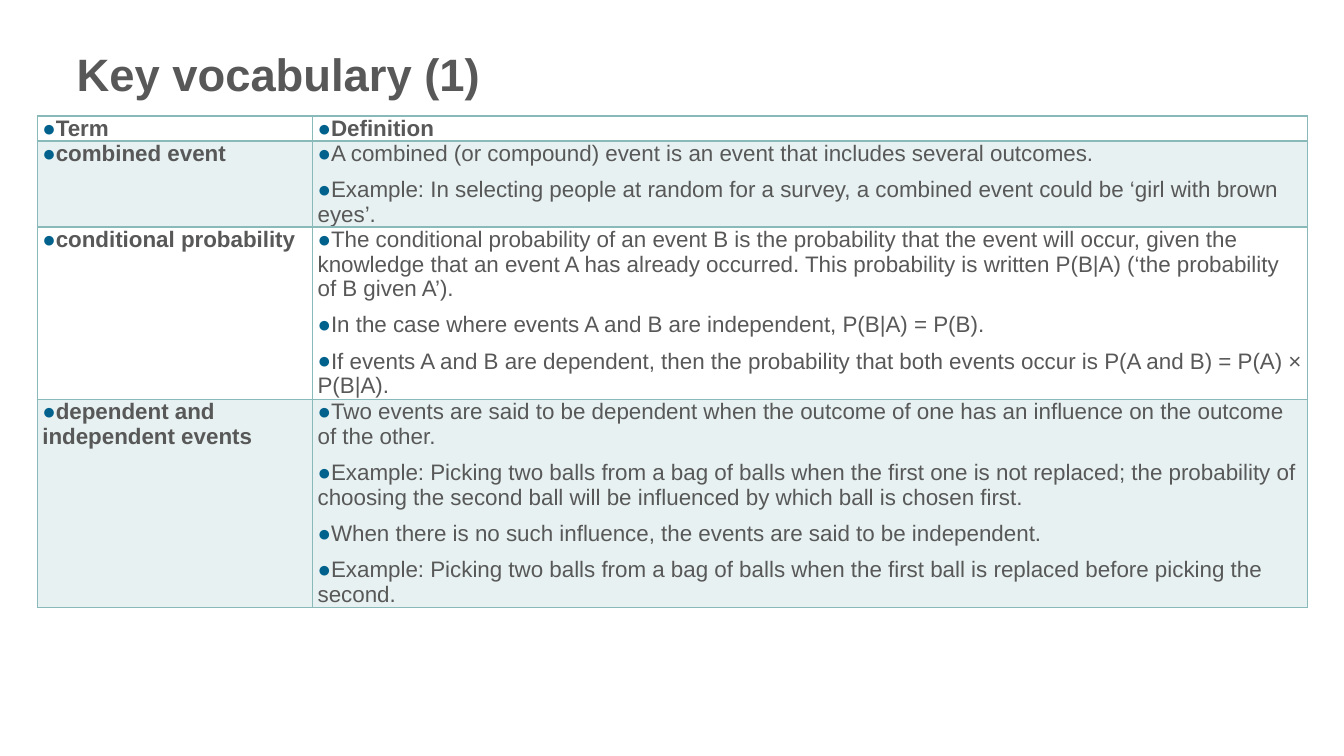
"""Build the slide of key vocabulary on combined and dependent events."""
from lxml.etree import SubElement as Sub
from pptx import Presentation
from pptx.dml.color import RGBColor as Rgb
from pptx.enum.text import MSO_ANCHOR as Anchor, MSO_AUTO_SIZE as Auto, PP_ALIGN as Align
from pptx.oxml.ns import qn
from pptx.util import Inches as In, Pt

HUES = {"text": "585858", "teal": "8AB9B9", "dot": "00628C"}
COLS = [2.73, 9.87]
ROWS = [
    (0.25, "Term", ["Definition"]),
    (0.85, "combined event", [
        "A combined (or compound) event is an event that includes several outcomes.",
        "Example: In selecting people at random for a survey, a combined event could be "
        "‘girl with brown eyes’.",
    ]),
    (1.71, "conditional probability", [
        "The conditional probability of an event B is the probability that the event will "
        "occur, given the knowledge that an event A has already occurred. This probability "
        "is written P(B|A) (‘the probability of B given A’).",
        "In the case where events A and B are independent, P(B|A) = P(B).",
        "If events A and B are dependent, then the probability that both events occur is "
        "P(A and B) = P(A) × P(B|A).",
    ]),
    (2.06, "dependent and independent events", [
        "Two events are said to be dependent when the outcome of one has an influence on "
        "the outcome of the other.",
        "Example: Picking two balls from a bag of balls when the first one is not replaced; "
        "the probability of choosing the second ball will be influenced by which ball is "
        "chosen first.",
        "When there is no such influence, the events are said to be independent.",
        "Example: Picking two balls from a bag of balls when the first ball is replaced "
        "before picking the second.",
    ]),
]


def style(para, size, bold):
    font = para.font
    font.name, font.size, font.bold = "Arial", Pt(size), bold
    font.color.rgb = Rgb.from_string(HUES["text"])


def tint(node, hue):
    fill = Sub(node, qn("a:solidFill"))
    return Sub(fill, qn("a:srgbClr"), val=HUES[hue])


deck = Presentation()
deck.slide_width, deck.slide_height = In(13.33), In(7.5)
slide = deck.slides.add_slide(deck.slide_layouts[5])

title = slide.shapes.title
title.left, title.top, title.width, title.height = In(0.66), In(0.47), In(12), In(1.07)
frame = title.text_frame
frame.text = "Key vocabulary (1)"
frame.auto_size, frame.vertical_anchor = Auto.NONE, Anchor.TOP
head = frame.paragraphs[0]
head.alignment, head.line_spacing = Align.LEFT, 0.9
style(head, 32.4, True)

tall = sum(row[0] for row in ROWS)
table = slide.shapes.add_table(
    len(ROWS), len(COLS), In(0.37), In(1.15), In(sum(COLS)), In(tall)).table
table.first_row = table.horz_banding = False
for col, wide in zip(table.columns, COLS):
    col.width = In(wide)

for r, (high, term, notes) in enumerate(ROWS):
    table.rows[r].height = In(high)
    for c, lines in enumerate([[term], notes]):
        cell = table.cell(r, c)
        cell.margin_left = cell.margin_right = In(0.05)
        cell.margin_top = cell.margin_bottom = 0
        cell.text = "\n".join(lines)
        for n, para in enumerate(cell.text_frame.paragraphs):
            para.space_before, para.space_after = Pt(4 if n else 0), Pt(4)
            props = para._p.get_or_add_pPr()
            props.set("marL", "0")
            props.set("indent", "0")
            Sub(Sub(props, qn("a:buClr")), qn("a:srgbClr"), val=HUES["dot"])
            Sub(props, qn("a:buFont"), typeface="Arial")
            Sub(props, qn("a:buChar"), char="●")
            style(para, 16, r == 0 or c == 0)

        box = cell._tc.get_or_add_tcPr()
        for side in "LRTB":
            thick = (r, side) in [(0, "B"), (1, "T")]
            edge = Sub(box, qn(f"a:ln{side}"), w=str(Pt(2 if thick else 1)))
            tint(edge, "teal")
        if r % 2:
            Sub(tint(box, "teal"), qn("a:alpha"), val="20000")
        else:
            cell.fill.background()

deck.save("out.pptx")
